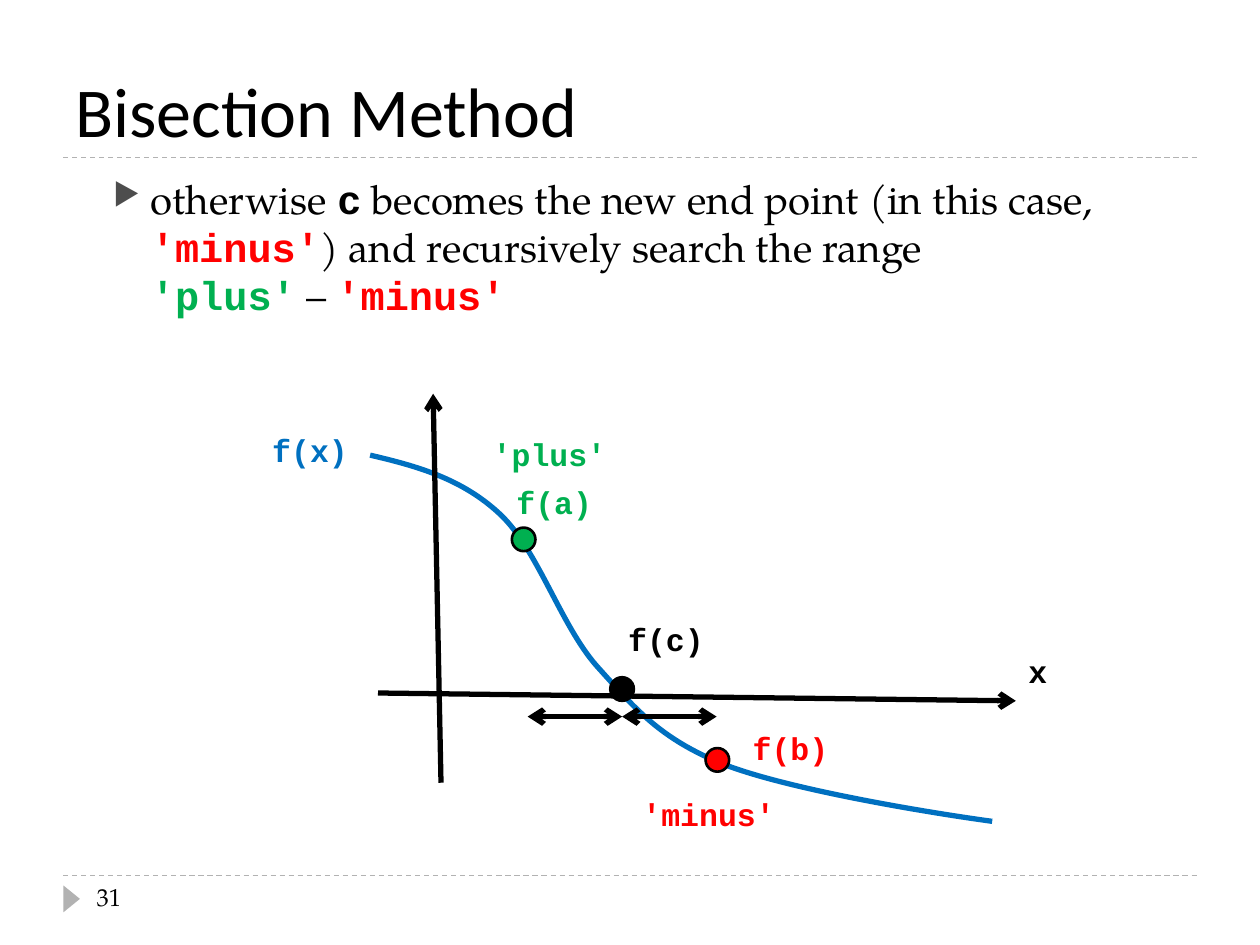
import pptx
import pptx.dml.color
import pptx.enum.dml
import pptx.enum.shapes
import pptx.enum.text
import pptx.oxml.ns
import pptx.util
import lxml.etree

CELL = pptx.util.Inches(1) // 16
COLS, ROWS = 160, 120
HUES = {"ink": "000000", "rule": "B2B2B2", "mark": "4D4D4D",
        "curve": "0070C0", "plus": "00B050", "minus": "FF0000"}
HEAD, SERIF, CODE = "Calibri", "TeX Gyre Pagella", "Courier New"
SHAPE = pptx.enum.shapes.MSO_SHAPE


def hue(name):
    """Return the named colour."""
    return pptx.dml.color.RGBColor.from_string(HUES[name])


def spot(box, col, row):
    """Turn a cell of a box into slide lengths."""
    return int((box[0] + col) * CELL), int((box[1] + row) * CELL)


def span(*cells):
    """Turn counts of cells into lengths."""
    return [int(cell * CELL) for cell in cells]


def sub(node, tag, **attrs):
    """Add a drawing element with attributes to a node."""
    return lxml.etree.SubElement(node, pptx.oxml.ns.qn(tag), attrs)


def style(run, size, face, tint="ink"):
    """Format a run; code is always bold."""
    font = run.font
    font.size, font.name, font.bold = pptx.util.Pt(size), face, face == CODE
    font.color.rgb = hue(tint)


def frame(slide, box, col, row, wide, high, wrap=True):
    """Add an empty text box and return its text frame."""
    text = slide.shapes.add_textbox(*spot(box, col, row), *span(wide, high)).text_frame
    text.word_wrap = wrap
    return text


def write(text, words, size, face, tint="ink"):
    """Fill a text frame with one styled run."""
    text.text = words
    style(text.paragraphs[0].runs[0], size, face, tint)


def rule(slide, box, start, end, width=3, tint="ink", tips=(), dash=False):
    """Draw a straight line with optional arrow tips."""
    line = slide.shapes.add_connector(
        pptx.enum.shapes.MSO_CONNECTOR.STRAIGHT, *spot(box, *start), *spot(box, *end))
    line.line.width = pptx.util.Pt(width)
    line.line.color.rgb = hue(tint)
    if dash:
        line.line.dash_style = pptx.enum.dml.MSO_LINE.DASH
    props = line._element.spPr
    for tip in tips:
        sub(props.find(pptx.oxml.ns.qn("a:ln")), tip, type="arrow")
    sub(props, "a:effectLst")


def solid(slide, kind, box, col, row, wide, high, tint):
    """Add a filled shape without shadow."""
    shape = slide.shapes.add_shape(kind, *spot(box, col, row), *span(wide, high))
    shape.shadow.inherit = False
    shape.fill.solid()
    shape.fill.fore_color.rgb = hue(tint)
    return shape


def title(slide, box):
    """Place the heading and the rule below it."""
    wide, high = box[2:]
    text = frame(slide, box, 0, 0, wide, high)
    text.vertical_anchor = pptx.enum.text.MSO_ANCHOR.BOTTOM
    write(text, "Bisection Method", 40, HEAD)
    rule(slide, box, (0, high), (wide, high), 0.75, "rule", dash=True)


def body(slide, box):
    """Place the bulleted sentence with its code words."""
    para = frame(slide, box, 0, 0, *box[2:]).paragraphs[0]
    para.space_before = pptx.util.Pt(5)
    props = para._p.get_or_add_pPr()
    props.set("marL", str(pptx.util.Inches(0.6)))
    props.set("indent", str(pptx.util.Inches(-0.3)))
    sub(sub(props, "a:buClr"), "a:srgbClr", val=HUES["mark"])
    sub(props, "a:buSzPct", val="76000")
    sub(props, "a:buChar", char="▶")
    lines = [
        [("otherwise ", SERIF, "ink"), ("c", CODE, "ink"),
         (" becomes the new end point (in this case, ", SERIF, "ink"),
         ("'minus'", CODE, "minus"),
         (") and recursively search the range ", SERIF, "ink")],
        [("'plus'", CODE, "plus"), (" – ", SERIF, "ink"), ("'minus'", CODE, "minus")],
    ]
    for num, line in enumerate(lines):
        if num:
            para.add_line_break()
        for words, face, tint in line:
            run = para.add_run()
            run.text = words
            style(run, 23, face, tint)


def curve(slide, box, knots):
    """Draw a smooth line: a start, then three points per Bézier piece."""
    first, *rest = [spot(box, *knot) for knot in knots]
    pen = slide.shapes.build_freeform(*first)
    pen.add_line_segments(rest, close=False)
    shape = pen.convert_to_shape()
    shape.shadow.inherit = False
    shape.fill.background()
    shape.line.color.rgb = hue("curve")
    shape.line.width = pptx.util.Pt(3)
    legs = list(shape._element.iter(pptx.oxml.ns.qn("a:lnTo")))
    for num in range(0, len(legs), 3):
        bend = sub(legs[num].getparent(), "a:cubicBezTo")
        for leg in legs[num:num + 3]:
            bend.append(leg[0])
            leg.getparent().remove(leg)


def graph(slide, box):
    """Plot the function, its axes, the halved range and the labels."""
    curve(slide, box, [
        (15, 9.8), (21, 11.2), (26.7, 12.8), (31.5, 17.3),
        (36.3, 21.8), (39.2, 31.4), (43.8, 36.6),
        (48.6, 41.9), (51.7, 45.8), (60, 49.1),
        (68.3, 52.3), (85.9, 55.2), (94, 56.3)])
    rule(slide, box, (24, 51.4), (23, 2), tips=["a:tailEnd"])
    rule(slide, box, (16, 40), (97, 41), tips=["a:tailEnd"])
    for left in (35, 47):
        rule(slide, box, (left, 43), (left + 12, 43), tips=["a:headEnd", "a:tailEnd"])
    for col, row, tint in [(33, 19, "plus"), (57.6, 47, "minus"), (45.5, 38, "ink")]:
        dot = solid(slide, SHAPE.OVAL, box, col, row, 3, 3, tint)
        dot.line.color.rgb = hue("ink")
        dot.line.width = pptx.util.Pt(1.5)
    for words, col, row, tint in [
            ("x", 97, 34, "ink"), ("f(x)", 1, 6, "curve"),
            ("f(a)", 32, 12.5, "plus"), ("f(b)", 62, 43.8, "minus"),
            ("'plus'", 29, 6.5, "plus"), ("'minus'", 48, 52.2, "minus"),
            ("f(c)", 46.2, 30, "ink")]:
        wide = 2.4 * len(words) + 3.2
        write(frame(slide, box, col, row, wide, 6.4, False), words, 18, CODE, tint)


def foot(slide, box):
    """Place the bottom rule, the marker and the page number."""
    rule(slide, box, (0, 0), (box[2], 0), 0.75, "rule", dash=True)
    mark = solid(slide, SHAPE.ISOSCELES_TRIANGLE, box, -0.6, 1.9, 3.4, 2.1, "rule")
    mark.line.fill.background()
    mark.rotation = 90
    write(frame(slide, box, 2.7, 0, 34.7, 6.4), "31", 14, SERIF)


def main():
    """Build and save the slide."""
    deck = pptx.Presentation()
    deck.slide_width, deck.slide_height = span(COLS, ROWS)
    slide = deck.slides.add_slide(deck.slide_layouts[6])
    side = 8
    wide = COLS - 2 * side
    title(slide, (side, 2.7, wide, 17.3))
    body(slide, (side, 21.3, wide, 86.4))
    foot(slide, (side, 111.2, wide, 8))
    graph(slide, (32, 48, 104, 60))
    deck.save("out.pptx")


if __name__ == "__main__":
    main()
